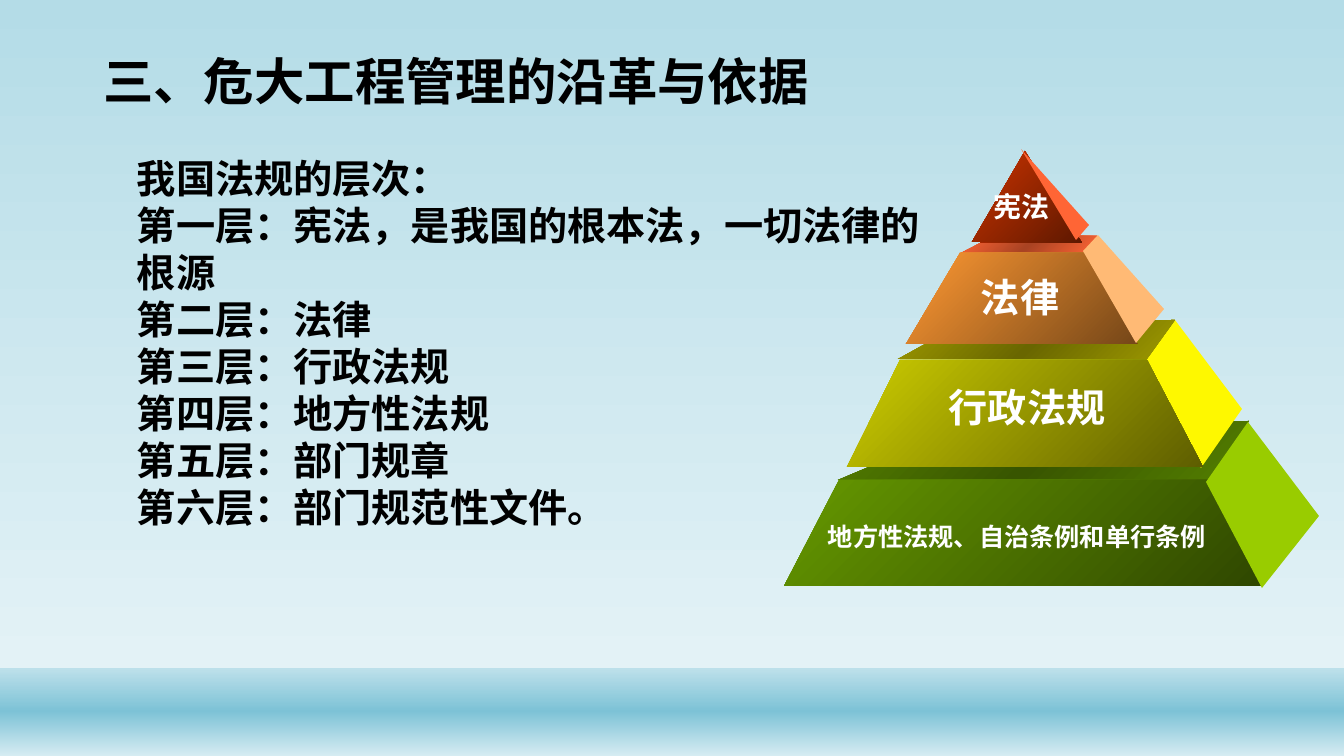
from dataclasses import dataclass

from lxml.etree import SubElement
from pptx import Presentation
from pptx.dml.color import RGBColor
from pptx.enum.shapes import MSO_SHAPE as SHAPE
from pptx.enum.text import MSO_ANCHOR as ANCHOR, PP_ALIGN as ALIGN
from pptx.oxml.ns import qn
from pptx.util import Pt

# Content
TITLE = "三、危大工程管理的沿革与依据"
LEVELS = [
    "我国法规的层次：",
    "第一层：宪法，是我国的根本法，一切法律的",
    "根源",
    "第二层：法律",
    "第三层：行政法规",
    "第四层：地方性法规",
    "第五层：部门规章",
    "第六层：部门规范性文件。",
]

# Pyramid faces from the base up: (outline in px, gradient stops or one colour)
FACES = [
    # Local regulations
    ([(838, 480), (1207, 481), (1249, 421), (966, 426)],
     [(0, "558000"), (50, "385500"), (100, "558000")]),
    ([(784, 586), (1262, 586), (1208, 480), (839, 480)],
     [(0, "669900"), (100, "2F4700")]),
    ([(1262, 588), (1319, 516), (1248, 422), (1206, 482)], "99CC00"),
    # Administrative regulations
    ([(1146, 360), (1201, 468), (1242, 409), (1175, 320)], "FEF800"),
    ([(898, 359), (1147, 359), (1175, 320), (967, 321)],
     [(0, "9E9A00"), (50, "696600"), (100, "9E9A00")]),
    ([(847, 467), (1203, 467), (1147, 360), (900, 360)],
     [(0, "CCCC00"), (100, "5E5E00")]),
    # Laws
    ([(961, 253), (1082, 253), (1097, 236), (994, 236)],
     [(0, "FF6535"), (50, "A94323"), (100, "FF6535")]),
    ([(906, 344), (1137, 344), (1084, 253), (960, 253)],
     [(0, "FF9933"), (100, "764718")]),
    ([(1136, 343), (1164, 309), (1098, 235), (1083, 251)], "FFBA75"),
    # Constitution
    ([(972, 242), (1082, 243), (1025, 151)],
     [(0, "CC3300"), (100, "5E1800")]),
    ([(1076, 240), (1089, 225), (1021, 149)], "FF6535"),
]

# Pyramid labels: (text, left, top, width, height, size)
LABELS = [
    ("法律", 971, 268, 118, 57, 28),
    ("行政法规", 939, 378, 190, 57, 28),
    ("地方性法规、自治条例和单行条例", 818, 516, 413, 40, 18),
    ("宪法", 984, 185, 91, 44, 20),
]


@dataclass(frozen=True)
class Theme:
    font: str = "Noto Sans CJK SC"
    ink: str = "000000"
    label: str = "FFFFFF"
    title_size: int = 36
    body_size: int = 28
    sky: tuple = ((0, "B4DCE7"), (88, "E3F2F6"))
    band: tuple = ((1, "BCE0EA"), (49, "7DC2D6"), (100, "D6ECF2"))


T = Theme()
W, H = 1344, 756
BAND_TOP = 668
SCALE = 12192000 / W


def px(*lengths):
    return [round(n * SCALE) for n in lengths]


def gradient(sp, stops, angle):
    sp.fill.gradient()
    sp.fill.gradient_angle = 360 - angle
    gs_list = sp.element.find(".//" + qn("a:gsLst"))
    for gs in list(gs_list):
        gs_list.remove(gs)
    for pos, color in stops:
        gs = SubElement(gs_list, qn("a:gs"), pos=str(pos * 1000))
        SubElement(gs, qn("a:srgbClr"), val=color)


def paint(sp, paint_with, angle=45):
    sp.shadow.inherit = False
    sp.line.fill.background()
    if isinstance(paint_with, str):
        sp.fill.solid()
        sp.fill.fore_color.rgb = RGBColor.from_string(paint_with)
    else:
        gradient(sp, paint_with, angle)


def style(p, size, color):
    p.alignment = ALIGN.LEFT
    p.font.name = T.font
    p.font.size = Pt(size)
    p.font.bold = True
    p.font.color.rgb = RGBColor.from_string(color)
    # East Asian text takes its own typeface element
    SubElement(p._p.pPr.find(qn("a:defRPr")), qn("a:ea"), typeface=T.font)


def text_box(s, box, lines, size, color, indent=0):
    tf = s.shapes.add_textbox(*px(*box)).text_frame
    tf.word_wrap = True
    tf.text = "\n".join(lines)
    for p in tf.paragraphs:
        if indent:
            p._p.get_or_add_pPr().set("marL", str(px(indent)[0]))
        style(p, size, color)


def main():
    prs = Presentation()
    prs.slide_width, prs.slide_height = px(W, H)
    s = prs.slides.add_slide(prs.slide_layouts[5])
    title = s.shapes.title

    # Sky and bottom band, placed behind the title
    for top, height, stops in [(0, H, T.sky), (BAND_TOP, H - BAND_TOP, T.band)]:
        sp = s.shapes.add_shape(SHAPE.RECTANGLE, *px(0, top, W, height))
        paint(sp, stops, 90)
        title.element.addprevious(sp.element)

    # Title
    title.left, title.top, title.width, title.height = px(93, 40, 1159, 77)
    tf = title.text_frame
    tf.text = TITLE
    tf.vertical_anchor = ANCHOR.BOTTOM
    tf.paragraphs[0].line_spacing = 0.9
    style(tf.paragraphs[0], T.title_size, T.ink)

    # Levels of law
    text_box(s, (77, 149, 1256, 480), LEVELS, T.body_size, T.ink, indent=50)

    # Pyramid
    for points, face_paint in FACES:
        builder = s.shapes.build_freeform(*points[0], scale=SCALE)
        builder.add_line_segments(points[1:], close=True)
        paint(builder.convert_to_shape(), face_paint)
    for text, *box, size in LABELS:
        text_box(s, box, [text], size, T.label)

    prs.save("out.pptx")


if __name__ == "__main__":
    main()
